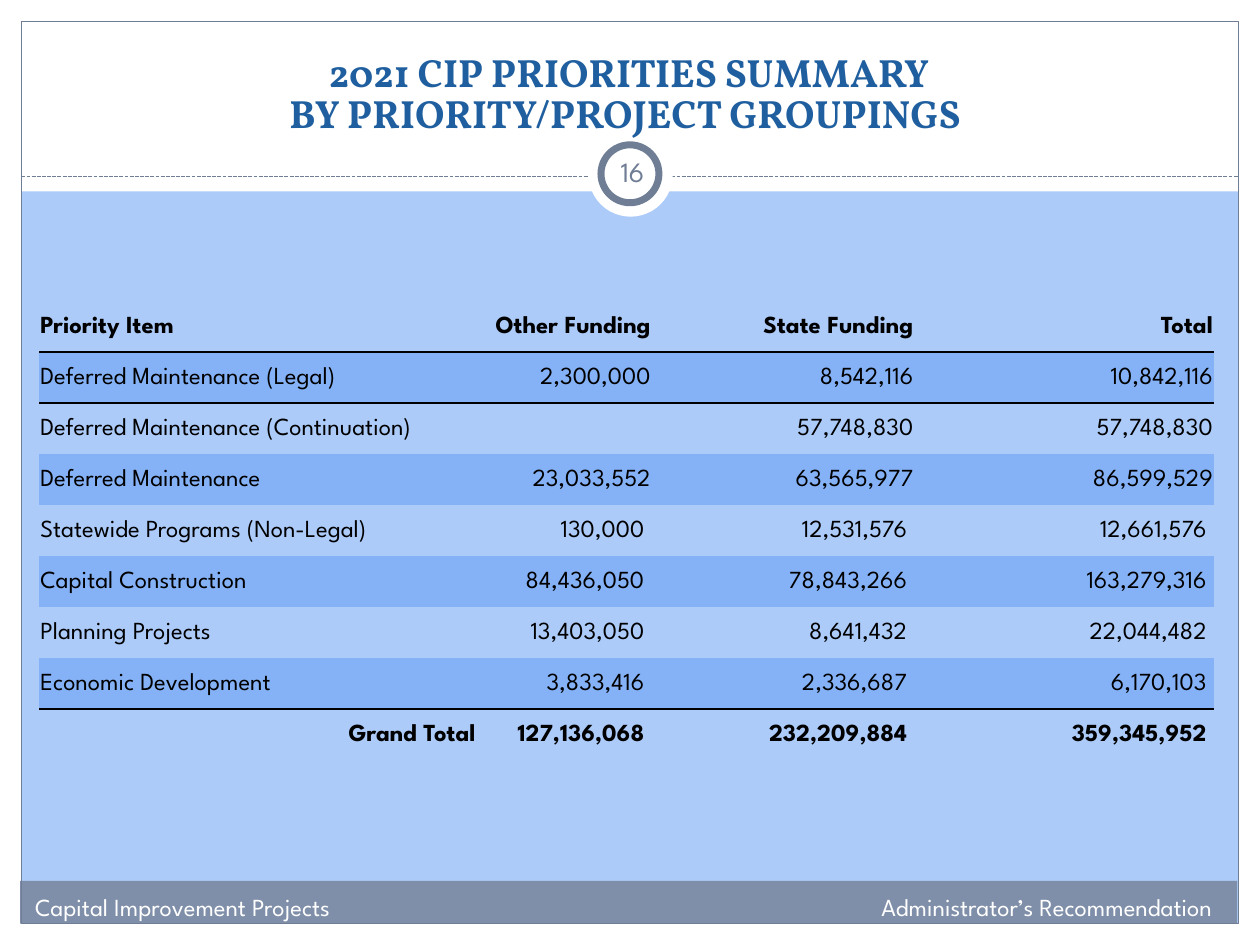
import lxml.etree
import pptx
import pptx.dml.color
import pptx.enum.dml
import pptx.enum.shapes
import pptx.enum.text
import pptx.oxml.ns
import pptx.util

COLORS = {
    "sky": "ACCBF9", "band": "85B2F6", "white": "FFFFFF", "footer": "7F8FA9",
    "frame": "707E95", "title": "1F5FA0", "ink": "000000",
}
SHAPES = pptx.enum.shapes.MSO_SHAPE
ALIGN = pptx.enum.text.PP_ALIGN
ANCHOR = pptx.enum.text.MSO_ANCHOR
NO_STYLE = "{2D5ABB26-0587-4C30-8999-92F81FD0307C}"
QN = pptx.oxml.ns.qn

FUNDING = [
    ("Priority Item", "Other Funding", "State Funding", "Total"),
    ("Deferred Maintenance (Legal)", "2,300,000", "8,542,116", "10,842,116"),
    ("Deferred Maintenance (Continuation)", "", "57,748,830", "57,748,830"),
    ("Deferred Maintenance", "23,033,552", "63,565,977", "86,599,529"),
    ("Statewide Programs (Non-Legal)", "130,000", "12,531,576", "12,661,576"),
    ("Capital Construction", "84,436,050", "78,843,266", "163,279,316"),
    ("Planning Projects", "13,403,050", "8,641,432", "22,044,482"),
    ("Economic Development", "3,833,416", "2,336,687", "6,170,103"),
    ("Grand Total", "127,136,068", "232,209,884", "359,345,952"),
]
LABEL_SPANS = [2, 5, 5, 4, 5, 3, 3, 4, 2]
COLUMN_UNITS = [1, 1, 1, 1, 1, 2, 1, 2, 1, 1, 1.42]
FIRST_PADDED_ROW = 4


def rgb(name):
    return pptx.dml.color.RGBColor.from_string(COLORS[name])


def write(frame, text, size=14, color="ink", font="League Spartan", bold=False,
          align=ALIGN.LEFT, spacing=None):
    paragraph = frame.paragraphs[0]
    paragraph.text = text
    paragraph.alignment = align
    paragraph.line_spacing = spacing
    for run in paragraph.runs:
        run.font.name = font
        run.font.size = pptx.util.Pt(size)
        run.font.bold = bold
        run.font.color.rgb = rgb(color)


def rule_cell(cell, side):
    line = lxml.etree.Element(QN("a:" + side), w="12700")
    fill = lxml.etree.SubElement(line, QN("a:solidFill"))
    lxml.etree.SubElement(fill, QN("a:srgbClr"), val=COLORS["ink"])
    cell._tc.get_or_add_tcPr().insert(0, line)


class SlideBuilder:
    def __init__(self, deck):
        self.deck = deck
        self.slide = deck.slides.add_slide(deck.slide_layouts[6])
        background = self.slide.background.fill
        background.solid()
        background.fore_color.rgb = rgb("sky")

    def x(self, percent):
        return round(self.deck.slide_width * percent / 100)

    def y(self, percent):
        return round(self.deck.slide_height * percent / 100)

    def box(self, left, top, width, height):
        return self.x(left), self.y(top), self.x(width), self.y(height)

    def shape(self, area, fill=None, line=None, weight=0.75, kind=SHAPES.RECTANGLE):
        shape = self.slide.shapes.add_shape(kind, *self.box(*area))
        shape.shadow.inherit = False
        if fill:
            shape.fill.solid()
            shape.fill.fore_color.rgb = rgb(fill)
        else:
            shape.fill.background()
        if line:
            shape.line.color.rgb = rgb(line)
            shape.line.width = pptx.util.Pt(weight)
        else:
            shape.line.fill.background()

    def dashed_line(self, left, right, height):
        line = self.slide.shapes.add_connector(
            pptx.enum.shapes.MSO_CONNECTOR.STRAIGHT,
            self.x(left), self.y(height), self.x(right), self.y(height))
        line.line.color.rgb = rgb("frame")
        line.line.width = pptx.util.Pt(0.75)
        line.line.dash_style = pptx.enum.dml.MSO_LINE.SQUARE_DOT
        lxml.etree.SubElement(line._element.spPr, QN("a:effectLst"))

    def text(self, area, text, anchor=ANCHOR.TOP, insets=(0.1, 0.05), **style):
        frame = self.slide.shapes.add_textbox(*self.box(*area)).text_frame
        frame.word_wrap = True
        frame.vertical_anchor = anchor
        frame.margin_left = frame.margin_right = pptx.util.Inches(insets[0])
        frame.margin_top = frame.margin_bottom = pptx.util.Inches(insets[1])
        write(frame, text, **style)

    def funding_table(self, area):
        last = len(FUNDING) - 1
        table = self.slide.shapes.add_table(
            len(FUNDING), len(COLUMN_UNITS), *self.box(*area)).table
        table.first_row = table.horz_banding = False
        table._tbl.tblPr.find(QN("a:tableStyleId")).text = NO_STYLE
        for column, units in zip(table.columns, COLUMN_UNITS):
            column.width = round(self.x(area[2]) * units / sum(COLUMN_UNITS))
        for index, (label, other, state, total) in enumerate(FUNDING):
            table.rows[index].height = round(self.y(area[3]) / len(FUNDING))
            for cell in table.rows[index].cells:
                self.style_cell(cell, index, last)
            start = 3 if index == last else 0
            table.cell(index, start).merge(
                table.cell(index, start + LABEL_SPANS[index] - 1))
            total_column = 10 if index == 0 else 9
            if index:
                table.cell(index, 9).merge(table.cell(index, 10))
            entries = {start: label, 5: other, 7: state, total_column: total}
            for column, entry in entries.items():
                if not entry:
                    continue
                cell = table.cell(index, column)
                if column >= 5 and index >= FIRST_PADDED_ROW:
                    cell.margin_right = pptx.util.Inches(0.06)
                write(cell.text_frame, entry, bold=index in (0, last),
                      align=ALIGN.RIGHT if column else ALIGN.LEFT)

    def style_cell(self, cell, index, last):
        cell.vertical_anchor = ANCHOR.MIDDLE
        cell.margin_left = cell.margin_right = cell.margin_top = pptx.util.Inches(0.01)
        cell.margin_bottom = 0
        if index % 2:
            cell.fill.solid()
            cell.fill.fore_color.rgb = rgb("band")
        else:
            cell.fill.background()
        if index in (0, last - 1):
            rule_cell(cell, "lnB")
        if index in (1, last):
            rule_cell(cell, "lnT")


def main():
    deck = pptx.Presentation()
    deck.slide_width = pptx.util.Inches(10)
    deck.slide_height = pptx.util.Inches(7.5)
    page = SlideBuilder(deck)

    for margin in [(0, 97.73, 100, 2.27), (0, 0, 100, 20.27),
                   (0, 0, 1.7, 100), (98.3, 0, 1.7, 100)]:
        page.shape(margin, fill="white")
    page.shape((1.6, 93.2, 96.6, 4.53), fill="footer")
    page.shape((1.7, 2.27, 96.6, 95.47), line="frame")
    page.dashed_line(1.7, 98.3, 18.67)
    page.shape((46.7, 14, 6.7, 8.93), fill="white", kind=SHAPES.OVAL)
    page.shape((47.7, 15.33, 4.6, 6.13), fill="white", line="frame", weight=4,
               kind=SHAPES.OVAL)

    page.text((3.3, 3.33, 93.3, 11.2),
              "2021 CIP PRIORITIES SUMMARY\vBY PRIORITY/PROJECT GROUPINGS ",
              anchor=ANCHOR.BOTTOM, insets=(0.1, 0), size=22.5, color="title",
              font="Vollkorn", bold=True, align=ALIGN.CENTER, spacing=0.88)
    page.text((47.7, 14.93, 5, 6.4), "16", anchor=ANCHOR.MIDDLE,
              insets=(0.05, 0.05), size=16, color="frame", align=ALIGN.CENTER)
    page.text((1.8, 93.73, 48, 4.53), "Capital Improvement Projects", color="white")
    page.text((49.2, 93.73, 48, 4.53), "Administrator’s Recommendation",
              color="white", align=ALIGN.RIGHT)
    page.funding_table((3.1, 31.87, 93.3, 48.6))
    deck.save("out.pptx")


if __name__ == "__main__":
    main()
